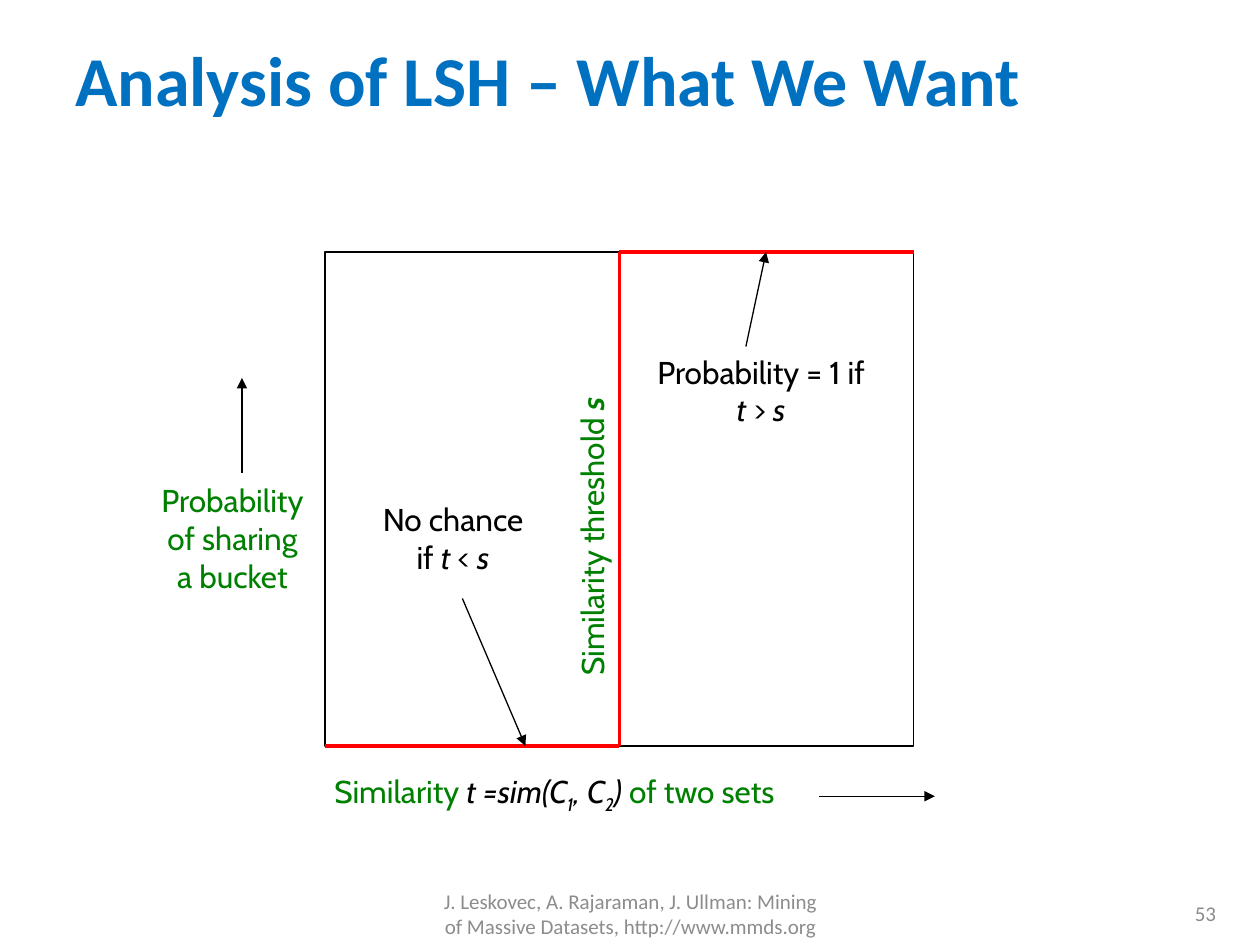
from lxml.etree import SubElement
from pptx import Presentation
from pptx.dml.color import RGBColor
from pptx.enum.shapes import MSO_CONNECTOR, MSO_SHAPE
from pptx.enum.text import MSO_ANCHOR, MSO_AUTO_SIZE, PP_ALIGN
from pptx.oxml.ns import qn
from pptx.util import Inches, Pt

BLACK = RGBColor(0x00, 0x00, 0x00)
BLUE = RGBColor(0x00, 0x70, 0xC0)
GREEN = RGBColor(0x00, 0x80, 0x00)
RED = RGBColor(0xFF, 0x00, 0x00)
GRAY = RGBColor(0x8C, 0x8C, 0x8C)


def add_text(slide, box, paragraphs, size=18, color=BLACK, font="Cabin",
             align=PP_ALIGN.CENTER, anchor=MSO_ANCHOR.TOP, wrap=True, grow=False):
    """Each paragraph is a list of (text, font attributes) runs."""
    tb = slide.shapes.add_textbox(*[Inches(v) for v in box])
    tf = tb.text_frame
    tf.word_wrap = wrap
    tf.vertical_anchor = anchor
    if grow:
        tf.auto_size = MSO_AUTO_SIZE.SHAPE_TO_FIT_TEXT
    for i, runs in enumerate(paragraphs):
        p = tf.add_paragraph() if i else tf.paragraphs[0]
        p.alignment = align
        p.font.name, p.font.size = font, Pt(size)
        p.font.color.rgb = color
        for text, style in runs:
            r = p.add_run()
            r.text = text
            r.font.bold = style.get("bold")
            r.font.italic = style.get("italic")
            if "color" in style:
                r.font.color.rgb = style["color"]
            if style.get("sub"):
                r.font._element.set("baseline", "-25000")
    return tb


def add_line(slide, start, end, color=BLACK, width=0.75, arrow=False):
    line = slide.shapes.add_connector(
        MSO_CONNECTOR.STRAIGHT, *[Inches(v) for v in (*start, *end)])
    line.line.color.rgb = color
    line.line.width = Pt(width)
    if arrow:
        SubElement(line.line._get_or_add_ln(), qn("a:tailEnd"), type="triangle")
    SubElement(line._element.spPr, qn("a:effectLst"))
    return line


def add_title(slide, box):
    add_text(slide, box, [[("Analysis of LSH – What We Want", {"bold": True})]],
             40, BLUE, "Calibri", PP_ALIGN.LEFT, MSO_ANCHOR.MIDDLE)


def add_step_plot(slide, x, y, w, h):
    """Frame with the ideal step curve and its notes."""
    right, bottom, middle = x + w, y + h, x + w / 2
    italic = {"italic": True}

    frame = slide.shapes.add_shape(
        MSO_SHAPE.RECTANGLE, *[Inches(v) for v in (x, y, w, h)])
    frame.shadow.inherit = False
    frame.fill.background()
    frame.line.color.rgb = BLACK
    frame.line.width = Pt(0.75)

    # Step curve: along the bottom, up at the threshold, along the top
    low = add_line(slide, (x, bottom), (middle, bottom), RED, 2)
    low.end_connect(frame, 2)
    rise = add_line(slide, (middle, bottom), (middle, y), RED, 2)
    rise.begin_connect(frame, 2)
    rise.end_connect(frame, 0)
    high = add_line(slide, (middle, y), (right, y), RED, 2)
    high.begin_connect(frame, 0)

    # Threshold label, read upwards
    threshold = add_text(
        slide, (middle - 1.48, y + 2.06, 2.52, 0.4),
        [[("Similarity threshold ", {}), ("s", {"bold": True, "italic": True})]],
        color=GREEN, wrap=False, grow=True)
    threshold.rotation = 270

    # Notes on the two halves
    add_text(slide, (x + 0.34, y + 1.92, 1.35, 0.7),
             [[("No chance", {})],
              [("if ", {}), ("t ", italic), ("< ", {}), ("s", italic)]],
             wrap=False, grow=True)
    add_line(slide, (x + 1.09, y + 2.75), (x + 1.59, bottom), arrow=True)
    add_text(slide, (x + 2.5, y + 0.75, 1.92, 0.7),
             [[("Probability = 1 if ", {}), ("t ", italic), ("> ", {}), ("s", italic)]],
             grow=True)
    add_line(slide, (x + 3.34, y + 0.75), (x + 3.5, y), arrow=True)


def add_axis_labels(slide, x, y, w, h):
    """Axis names and arrows around the plot box."""
    bottom = y + h
    symbol = {"italic": True, "color": BLACK}
    index = {**symbol, "sub": True}

    # Horizontal axis
    add_text(slide, (x - 0.18, bottom + 0.16, 4, 0.4),
             [[("Similarity ", {}), ("t =sim(C", symbol), ("1", index),
               (", C", symbol), ("2", index), (") ", symbol), ("of two sets", {})]],
             color=GREEN, grow=True)
    add_line(slide, (x + 3.92, bottom + 0.4), (x + 4.84, bottom + 0.4), arrow=True)

    # Vertical axis
    lines = ("Probability", "of sharing", "a bucket")
    add_text(slide, (x - 1.41, y + 1.77, 1.35, 1), [[(t, {})] for t in lines],
             color=GREEN, wrap=False, grow=True)
    add_line(slide, (x - 0.66, y + 1.75), (x - 0.66, y + 1), arrow=True)


def add_footer(slide, y, h):
    for x, w, text, align in (
        (3.42, 3.17, "J. Leskovec, A. Rajaraman, J. Ullman: Mining of Massive "
                     "Datasets, http://www.mmds.org", PP_ALIGN.CENTER),
        (7.42, 2.33, "53", PP_ALIGN.RIGHT),
    ):
        add_text(slide, (x, y, w, h), [[(text, {})]], 12, GRAY, "Calibri",
                 align, MSO_ANCHOR.MIDDLE)


def main():
    prs = Presentation()
    prs.slide_width, prs.slide_height = Inches(10), Inches(7.5)
    s = prs.slides.add_slide(prs.slide_layouts[6])
    plot = (2.58, 2, 4.67, 3.92)
    add_title(s, (0.5, 0.08, 9.33, 1.08))
    add_step_plot(s, *plot)
    add_axis_labels(s, *plot)
    add_footer(s, 7.05, 0.4)
    prs.save("out.pptx")


if __name__ == "__main__":
    main()
